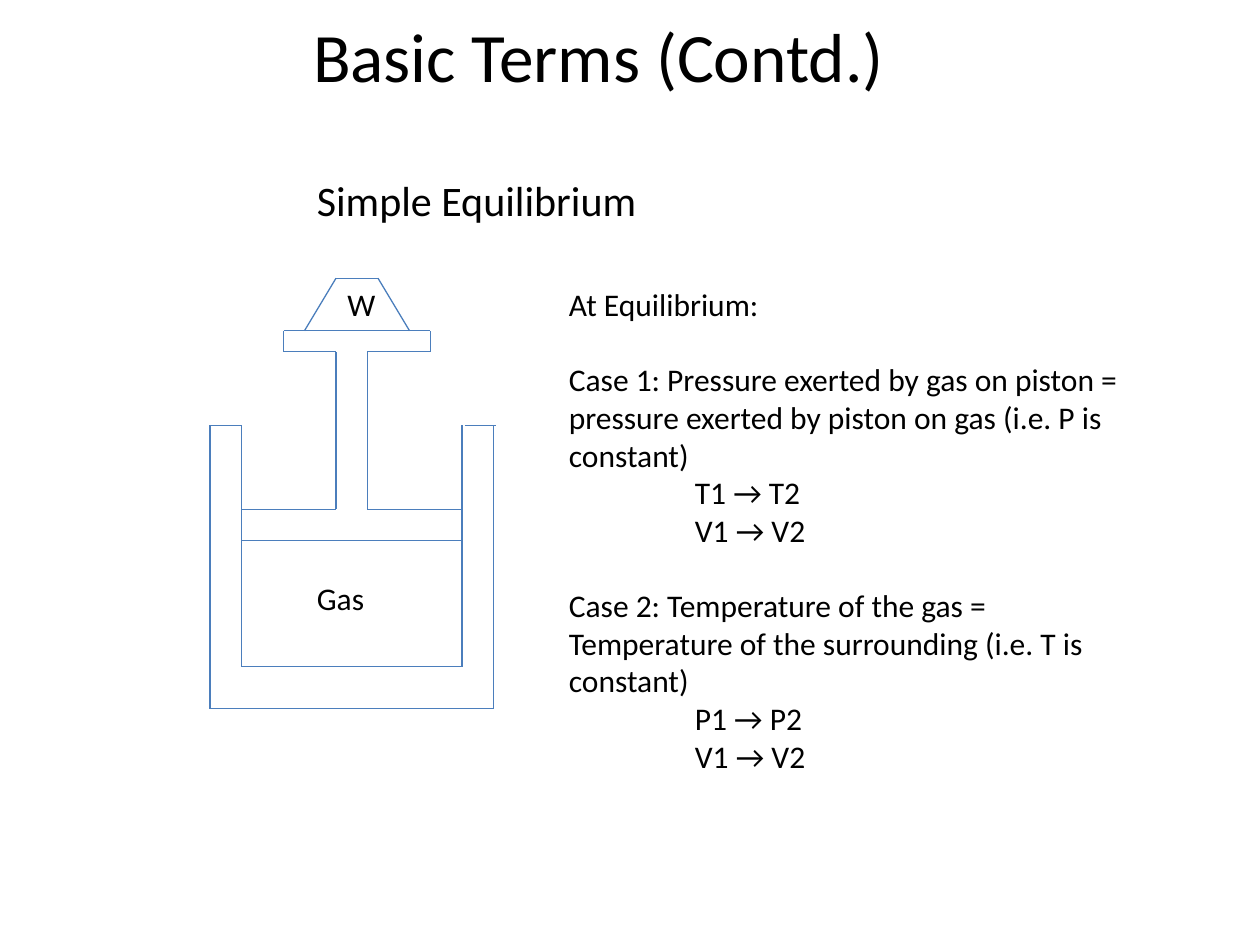
from itertools import pairwise

from pptx import Presentation
from pptx.dml.color import RGBColor
from pptx.enum.shapes import MSO_CONNECTOR as Connector
from pptx.enum.text import MSO_ANCHOR as Anchor, MSO_AUTO_SIZE as AutoSize, PP_ALIGN as Align
from pptx.oxml.xmlchemy import OxmlElement
from pptx.util import Inches, Pt

TITLE = "Basic Terms (Contd.)"
SUBTITLE = "Simple Equilibrium"
CASES = [
    ("Case 1: Pressure exerted by gas on piston = pressure exerted by piston on gas "
     "(i.e. P is constant)", ["T1 → T2", "V1 → V2"]),
    ("Case 2: Temperature of the gas = Temperature of the surrounding "
     "(i.e. T is constant)", ["P1 → P2", "V1 → V2"]),
]
GRID = 24
CYLINDER = [
    [(46, 81), (40, 81), (40, 135), (94, 135), (94, 81)],
    [(46, 81), (46, 127), (88, 127), (88, 81)],
    [(88.5, 81), (94.5, 81)],
]
PISTON = [
    [(46, 103), (88, 103)],
    [(46, 97), (64, 97), (64, 67), (54, 67), (54, 63)],
    [(88, 97), (70, 97), (70, 67), (82, 67), (82, 63)],
    [(54, 63), (82, 63)],
]
WEIGHT = [[(58, 63), (64, 53), (72, 53), (78, 63)]]
LABELS = [("W", (63.8, 53.2, 10.2, 9.6)), ("Gas", (58, 109.2, 14, 9.6))]


def color(value):
    return RGBColor.from_string(value)


def cells(*values):
    return [Inches(value / GRID) for value in values]


def apply_format(target, **values):
    for name, value in values.items():
        setattr(target, name, value)


def write(paragraph, text, size=18):
    run = paragraph.add_run()
    run.text = text
    apply_format(run.font, name="Calibri", size=Pt(size))
    run.font.color.rgb = color("000000")


def add_text(shapes, box, lines, size=18, wrap=False):
    frame = shapes.add_textbox(*cells(*box)).text_frame
    apply_format(frame, word_wrap=wrap, auto_size=AutoSize.SHAPE_TO_FIT_TEXT)
    for index, (text, gap, indent) in enumerate(lines):
        paragraph = frame.add_paragraph() if index else frame.paragraphs[0]
        write(paragraph, text, size)
        if gap:
            paragraph.space_before = Pt(gap)
        if indent:
            paragraph._p.get_or_add_pPr().set("marL", str(Inches(indent)))


def add_outline(shapes, points):
    for start, end in pairwise(points):
        connector = shapes.add_connector(Connector.STRAIGHT, *cells(*start, *end))
        connector.line.width = Pt(0.75)
        connector.line.color.rgb = color("4B7EBC")
        connector._element.spPr.append(OxmlElement("a:effectLst"))


def main():
    presentation = Presentation()
    apply_format(presentation, slide_width=Inches(10), slide_height=Inches(7.5))
    slide = presentation.slides.add_slide(presentation.slide_layouts[5])

    title = slide.shapes.title
    left, top, width, height = cells(6, 4, 216, 12.8)
    apply_format(title, left=left, top=top, width=width, height=height)
    apply_format(title.text_frame, vertical_anchor=Anchor.MIDDLE, auto_size=AutoSize.NONE)
    paragraph = title.text_frame.paragraphs[0]
    paragraph.alignment = Align.CENTER
    write(paragraph, TITLE, 39.6)

    apparatus = slide.shapes.add_group_shape()
    for points in CYLINDER + PISTON + WEIGHT:
        add_outline(apparatus.shapes, points)
    for text, box in LABELS:
        add_text(apparatus.shapes, box, [(text, 0, 0)])

    lines = [("At Equilibrium:", 0, 0)]
    for statement, changes in CASES:
        lines.append((statement, 21, 0))
        lines += [(change, 0, 1) for change in changes]
    add_text(slide.shapes, (106, 53.2, 112, 97), lines, wrap=True)
    add_text(slide.shapes, (58, 32, 66.2, 12), [(SUBTITLE, 0, 0)], size=24)

    presentation.save("out.pptx")


if __name__ == "__main__":
    main()
